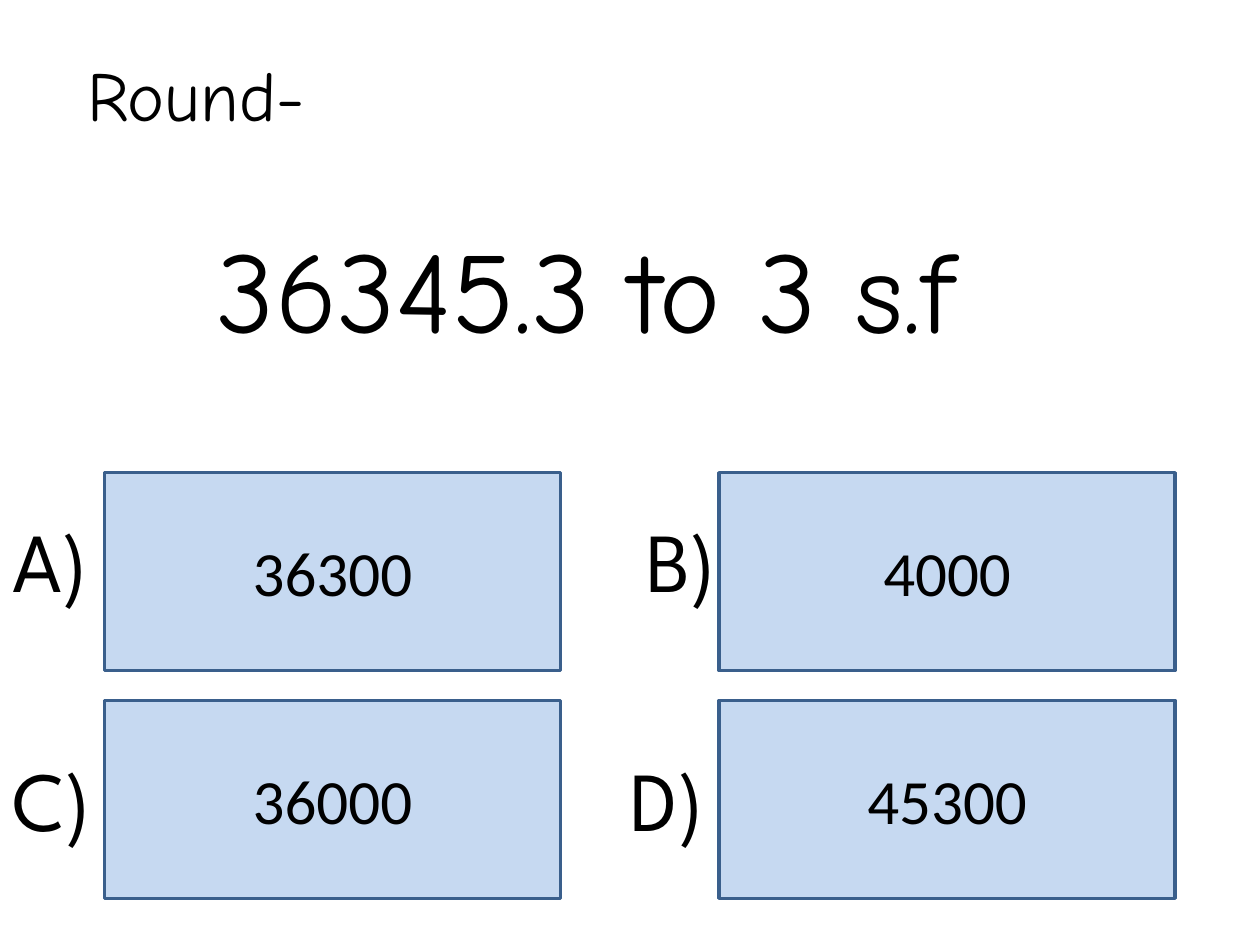
from dataclasses import dataclass

from pptx import Presentation
from pptx import util as u
from pptx.dml.color import RGBColor
from pptx.enum import shapes, text

COLOURS = {"ink": "000000", "panel": "C6D9F1", "border": "3A5F8C"}
COLUMNS = (2.11, 14.5)  # left edges of the answer panels, cm
ROWS = (9.53, 14.12)  # top edges of the answer panels, cm
LABEL_TOPS = (10.13, 14.94)
PANEL_SIZE = (9.19, 3.99)
LABEL_HEIGHT = 2.31


@dataclass
class Answer:
    letter: str
    value: str
    column: int
    row: int
    label_left: float
    label_width: float


ANSWERS = (
    Answer("A)", "36300", 0, 0, 0, 2.41),
    Answer("B)", "4000", 1, 0, 12.78, 2.13),
    Answer("C)", "36000", 0, 1, 0, 2.54),
    Answer("D)", "45300", 1, 1, 12.47, 2.41),
)


def colour(name: str) -> RGBColor:
    return RGBColor.from_string(COLOURS[name])


def style(para, font: str, size: int, align=text.PP_ALIGN.LEFT) -> None:
    para.alignment = align
    para.font.name = font
    para.font.size = u.Pt(size)
    para.font.color.rgb = colour("ink")


def draw_panel(page, answer: Answer) -> None:
    box = page.shapes.add_shape(
        shapes.MSO_SHAPE.RECTANGLE,
        u.Cm(COLUMNS[answer.column]), u.Cm(ROWS[answer.row]),
        *map(u.Cm, PANEL_SIZE))
    box.shadow.inherit = False
    box.fill.solid()
    box.fill.fore_color.rgb = colour("panel")
    box.line.color.rgb = colour("border")
    box.line.width = u.Pt(2)
    frame = box.text_frame
    frame.text = answer.value
    frame.vertical_anchor = text.MSO_ANCHOR.MIDDLE
    style(frame.paragraphs[0], "Calibri", 36, text.PP_ALIGN.CENTER)


def draw_label(page, answer: Answer) -> None:
    box = page.shapes.add_textbox(
        u.Cm(answer.label_left), u.Cm(LABEL_TOPS[answer.row]),
        u.Cm(answer.label_width), u.Cm(LABEL_HEIGHT))
    frame = box.text_frame
    frame.text = answer.letter
    frame.word_wrap = False
    frame.auto_size = text.MSO_AUTO_SIZE.SHAPE_TO_FIT_TEXT
    style(frame.paragraphs[0], "League Spartan", 48)


def draw_question(page) -> None:
    box = page.shapes.title
    box.left, box.top = u.Cm(1.5), u.Cm(0.91)
    box.width, box.height = u.Cm(20.6), u.Cm(6.5)
    frame = box.text_frame
    frame.text = "Round-\n36345.3 to 3 s.f"
    frame.word_wrap = True
    frame.auto_size = text.MSO_AUTO_SIZE.NONE
    frame.vertical_anchor = text.MSO_ANCHOR.TOP
    prompt, number = frame.paragraphs
    style(prompt, "Comic Neue", 40)
    style(number, "Comic Neue", 66, text.PP_ALIGN.CENTER)
    number.space_before = u.Pt(47)


def main() -> None:
    deck = Presentation()
    deck.slide_width, deck.slide_height = u.Cm(25.4), u.Cm(19.05)
    page = deck.slides.add_slide(deck.slide_layouts.get_by_name("Title Only"))

    # Question
    draw_question(page)

    # Answer panels, then their letters on top
    for answer in ANSWERS:
        draw_panel(page, answer)
    for answer in ANSWERS:
        draw_label(page, answer)

    deck.save("out.pptx")


if __name__ == "__main__":
    main()
